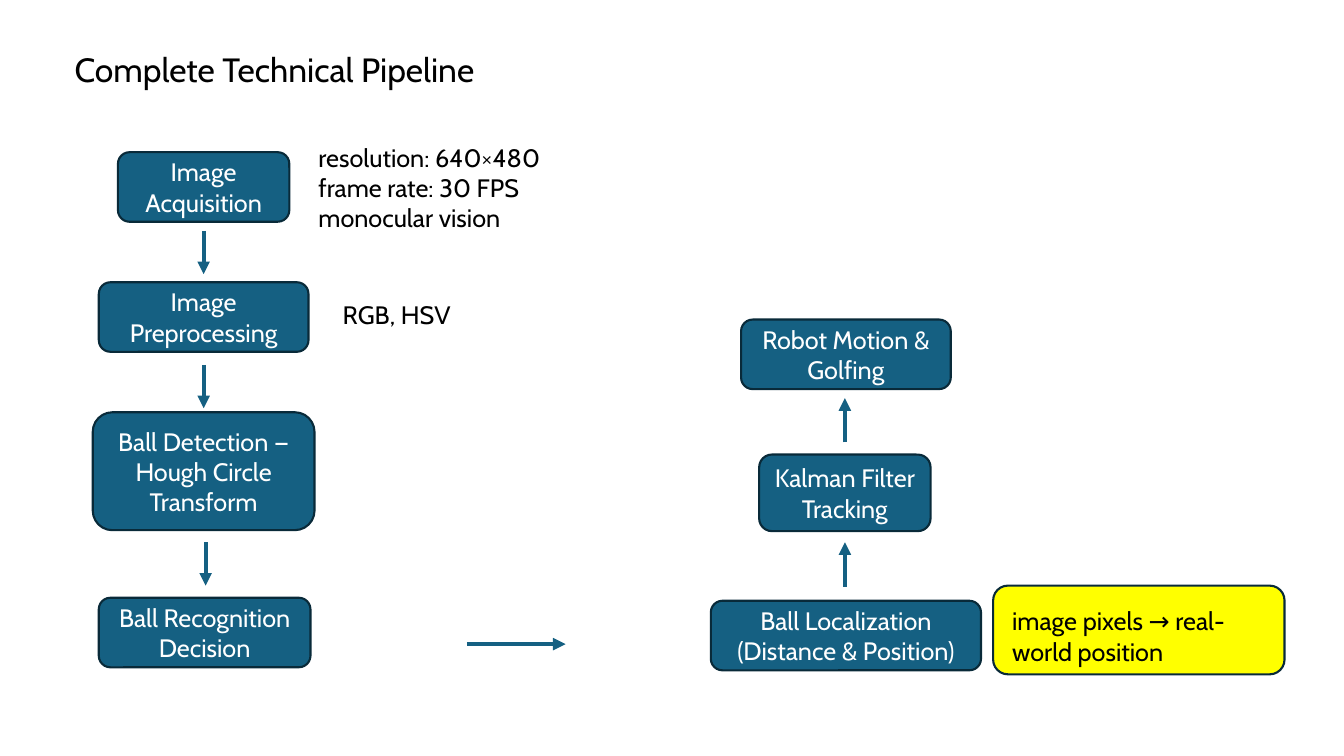
from lxml import etree
from pptx import Presentation
from pptx.dml.color import RGBColor
from pptx.enum.shapes import MSO_CONNECTOR, MSO_SHAPE
from pptx.enum.text import MSO_ANCHOR, PP_ALIGN
from pptx.oxml.ns import qn
from pptx.util import Pt

PX = 9144  # 100 px to the inch
ROUND = MSO_SHAPE.ROUNDED_RECTANGLE
STRAIGHT = MSO_CONNECTOR.STRAIGHT
MIDDLE = MSO_ANCHOR.MIDDLE
LEFT, CENTER = PP_ALIGN.LEFT, PP_ALIGN.CENTER
BLUE, NAVY, YELLOW = "156082", "092A39", "FFFF00"
BLACK, WHITE = "000000", "FFFFFF"


def color(code):
    return RGBColor.from_string(code)


def write(frame, text, size, ink, align):
    """Fill the frame's first paragraph, with a line break at each newline."""
    frame.word_wrap = True
    para = frame.paragraphs[0]
    para.alignment = align
    for i, line in enumerate(text.split("\n")):
        if i:
            para.add_line_break()
        run = para.add_run()
        run.text = line
        run.font.name = "Cabin"
        run.font.size = Pt(size)
        run.font.color.rgb = color(ink)
    return para


deck = Presentation()
deck.slide_width, deck.slide_height = 1333 * PX, 750 * PX
slide = deck.slides.add_slide(deck.slide_layouts[5])
shapes = slide.shapes

title = shapes.title
title.left, title.top, title.width, title.height = 64 * PX, 19 * PX, 1150 * PX, 105 * PX
title.text_frame.vertical_anchor = MIDDLE
write(title.text_frame, "Complete Technical Pipeline", 24, BLACK, LEFT).line_spacing = 0.9

# left, top, width, height, fill, text
boxes = [
    (985, 581, 289, 88, YELLOW, ""),
    (117, 151, 170, 69, BLUE, "Image Acquisition"),
    (98, 280, 208, 69, BLUE, "Image Preprocessing"),
    (92, 409, 220, 117, BLUE, "Ball Detection — Hough Circle Transform"),
    (98, 593, 210, 69, BLUE, "Ball Recognition Decision"),
    (705, 596, 268, 69, BLUE, "Ball Localization (Distance & Position)"),
    (753, 451, 170, 76, BLUE, "Kalman Filter Tracking"),
    (735, 317, 208, 69, BLUE, "Robot Motion & Golfing"),
]
for left, top, width, height, fill, text in boxes:
    box = shapes.add_shape(ROUND, left * PX, top * PX, width * PX, height * PX)
    box.shadow.inherit = False
    box.fill.solid()
    box.fill.fore_color.rgb = color(fill)
    box.line.color.rgb = color(NAVY)
    box.line.width = Pt(1.5)
    if text:
        box.text_frame.vertical_anchor = MIDDLE
        write(box.text_frame, text, 18, WHITE, CENTER)

# start x, start y, run across, run down
arrows = [
    (202, 229, 0, 43),
    (202, 362, 0, 43),
    (204, 538, 0, 43),
    (463, 639, 98, 0),
    (838, 582, 0, -44),
    (838, 439, 0, -44),
]
for x, y, across, down in arrows:
    arrow = shapes.add_connector(STRAIGHT, x * PX, y * PX, (x + across) * PX, (y + down) * PX)
    arrow.line.color.rgb = color(BLUE)
    arrow.line.width = Pt(3)
    etree.SubElement(arrow.line._get_or_add_ln(), qn("a:tailEnd"), type="triangle")
    etree.SubElement(arrow._element.spPr, qn("a:effectLst"))

notes = [
    (306, 136, 278, 101, "resolution: 640×480 frame rate: 30 FPS\nmonocular vision"),
    (330, 292, 133, 40, "RGB, HSV"),
    (994, 596, 248, 71, "image pixels → real-world position"),
]
for left, top, width, height, text in notes:
    note = shapes.add_textbox(left * PX, top * PX, width * PX, height * PX)
    write(note.text_frame, text, 18, BLACK, LEFT)

deck.save("out.pptx")
